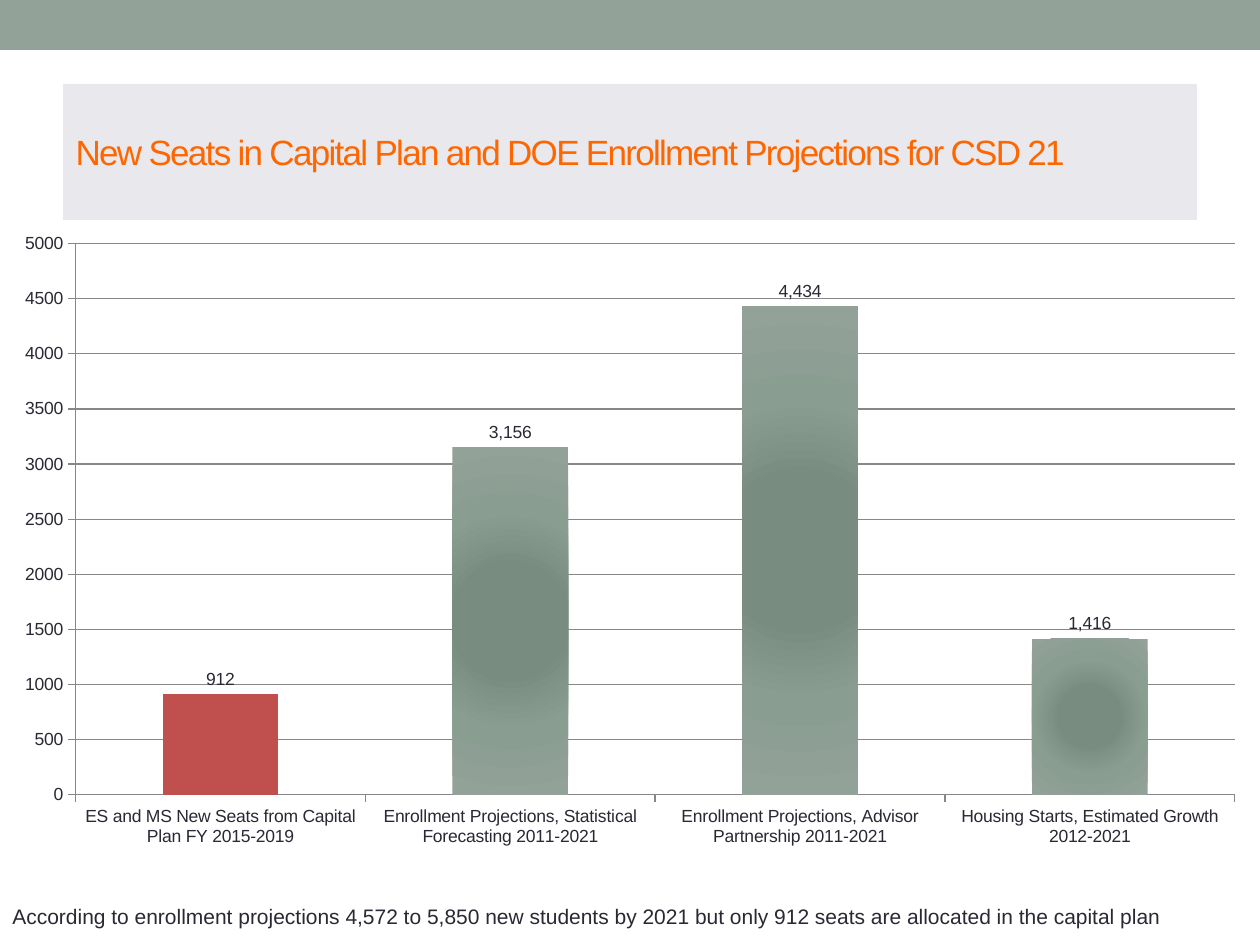
from dataclasses import dataclass

from pptx import Presentation
from pptx.chart.data import CategoryChartData
from pptx.dml.color import RGBColor
from pptx.enum.chart import XL_CHART_TYPE as ChartType
from pptx.enum.chart import XL_LABEL_POSITION as LabelPosition
from pptx.enum.chart import XL_TICK_MARK as TickMark
from pptx.enum.shapes import MSO_SHAPE as Shape
from pptx.enum.text import MSO_ANCHOR as Anchor
from pptx.enum.text import MSO_AUTO_SIZE as AutoSize
from pptx.enum.text import PP_ALIGN as Align
from pptx.oxml import parse_xml
from pptx.oxml.ns import nsdecls
from pptx.util import Emu, Pt


@dataclass(frozen=True)
class Theme:
    font: str = "Arial"
    sage: str = "93A299"
    sage_mid: str = "8A9D91"
    sage_dark: str = "788D80"
    panel: str = "E8E8ED"
    orange: str = "FF6600"
    red: str = "C0504D"
    ink: str = "292934"
    grid: str = "878787"
    title_size: int = 20
    note_size: int = 12
    chart_size: int = 10


theme = Theme()
SCALE = 914400 / 126


def px(*lengths):
    return [Emu(round(length * SCALE)) for length in lengths]


def style_font(font, size, color):
    for name, value in {"name": theme.font, "size": Pt(size), "bold": False}.items():
        setattr(font, name, value)
    font.color.rgb = RGBColor.from_string(color)


deck = Presentation()
deck.slide_width, deck.slide_height = px(1260, 945)
page = deck.slides.add_slide(deck.slide_layouts[5])

band = page.shapes.add_shape(Shape.RECTANGLE, *px(0, 0, 1260, 50))
band.shadow.inherit = False
band.fill.solid()
band.fill.fore_color.rgb = RGBColor.from_string(theme.sage)
band.line.fill.background()

title = page.shapes.title
title.left, title.top, title.width, title.height = px(63, 84, 1134, 136)
title.fill.solid()
title.fill.fore_color.rgb = RGBColor.from_string(theme.panel)
title.text_frame.vertical_anchor = Anchor.MIDDLE
para = title.text_frame.paragraphs[0]
para.alignment = Align.LEFT
span = para.add_run()
span.text = "New Seats in Capital Plan and DOE Enrollment Projections for CSD 21"
style_font(span.font, theme.title_size, theme.orange)
span.font._element.set("spc", "-100")

seats = {
    "ES and MS New Seats from Capital Plan FY 2015-2019": 912,
    "Enrollment Projections, Statistical Forecasting 2011-2021": 3156,
    "Enrollment Projections, Advisor Partnership 2011-2021": 4434,
    "Housing Starts, Estimated Growth 2012-2021": 1416,
}
data = CategoryChartData(number_format="#,##0")
data.categories = list(seats)
data.add_series("Series 1", seats.values())
frame = page.shapes.add_chart(ChartType.COLUMN_CLUSTERED, *px(0, 218, 1260, 641), data)
chart = frame.chart
chart.has_legend = False
chart.has_title = False
style_font(chart.font, theme.chart_size, theme.ink)

plot_area = chart.plots[0]._element.getparent()
for layout in plot_area.findall("{*}layout"):
    plot_area.remove(layout)
bounds = {"x": 0.06, "y": 0.04, "w": 0.92, "h": 0.86}
sides = "".join(f'<c:{side} val="{share}"/>' for side, share in bounds.items())
plot_area.insert(0, parse_xml(
    f'<c:layout {nsdecls("c")}><c:manualLayout><c:layoutTarget val="inner"/>'
    f'<c:xMode val="edge"/><c:yMode val="edge"/>{sides}</c:manualLayout></c:layout>'
))

value_axis, category_axis = chart.value_axis, chart.category_axis
for name, value in {
    "minimum_scale": 0,
    "maximum_scale": 5000,
    "major_unit": 500,
    "has_major_gridlines": True,
}.items():
    setattr(value_axis, name, value)
value_axis.tick_labels.number_format = "0"
value_axis.tick_labels.number_format_is_linked = False
for axis in (value_axis, category_axis):
    axis.major_tick_mark = TickMark.OUTSIDE
    axis.minor_tick_mark = TickMark.NONE
for part in (value_axis, category_axis, value_axis.major_gridlines):
    part.format.line.color.rgb = RGBColor.from_string(theme.grid)
    part.format.line.width = Pt(0.75)

plot = chart.plots[0]
plot.gap_width = 150
plot.vary_by_categories = False
plot.has_data_labels = True
for name, value in {
    "show_value": True,
    "number_format": "#,##0",
    "number_format_is_linked": False,
    "position": LabelPosition.OUTSIDE_END,
}.items():
    setattr(plot.data_labels, name, value)
style_font(plot.data_labels.font, theme.chart_size, theme.ink)

series = plot.series[0]
series.invert_if_negative = False
stops = {0: theme.sage_dark, 30: theme.sage_dark, 60: theme.sage_mid, 100: theme.sage}
stop_xml = "".join(
    f'<a:gs pos="{share * 1000}"><a:srgbClr val="{color}"/></a:gs>'
    for share, color in stops.items()
)
series._element.get_or_add_spPr().insert(0, parse_xml(
    f'<a:gradFill {nsdecls("a")} rotWithShape="1"><a:gsLst>{stop_xml}</a:gsLst>'
    '<a:path path="circle"><a:fillToRect l="50000" t="50000" r="50000" b="50000"/>'
    "</a:path></a:gradFill>"
))
planned = series.points[0].format.fill
planned.solid()
planned.fore_color.rgb = RGBColor.from_string(theme.red)

note = page.shapes.add_textbox(*px(0, 897, 1188, 38))
note.text_frame.word_wrap = False
note.text_frame.auto_size = AutoSize.SHAPE_TO_FIT_TEXT
span = note.text_frame.paragraphs[0].add_run()
span.text = (
    "According to enrollment projections 4,572 to 5,850 new students by 2021 "
    "but only 912 seats are allocated in the capital plan"
)
style_font(span.font, theme.note_size, theme.ink)

deck.save("out.pptx")
